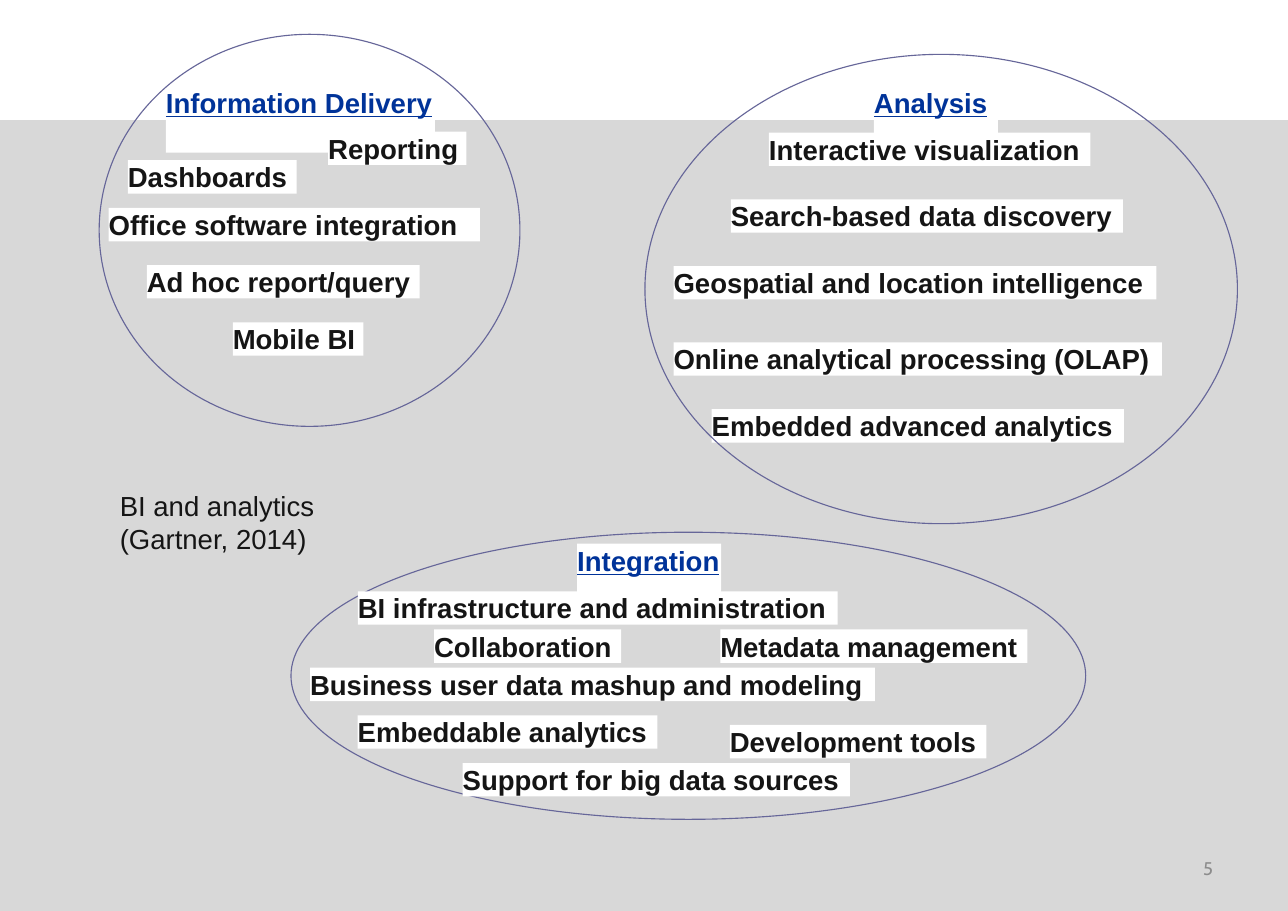
from pptx import Presentation
from pptx.dml.color import RGBColor
from pptx.enum.shapes import MSO_SHAPE as Shape
from pptx.enum.text import MSO_ANCHOR as Anchor, MSO_AUTO_SIZE as AutoSize, PP_ALIGN as Align
from pptx.util import Inches, Pt

WIDTH, HEIGHT = Inches(11.69), Inches(8.27)
CELL = WIDTH / 135  # square grid: 135 columns across the slide
LABEL_ROWS, HEADING_ROWS = 3.5, 7
ROW_SHIFT = 0.2  # labels sit slightly below their grid row

WHITE = RGBColor(0xFF, 0xFF, 0xFF)
GREY = RGBColor(0xD8, 0xD8, 0xD8)
NUMBER_GREY = RGBColor(0x8C, 0x8C, 0x8C)
INK = RGBColor(0x15, 0x15, 0x15)
BLUE = RGBColor(0x00, 0x33, 0x99)
RING = RGBColor(0x66, 0x66, 0x99)

PLAIN = dict(name="Arial", size=Pt(18), bold=False, color=INK)
LABEL = dict(PLAIN, bold=True)
HEADING = dict(LABEL, color=BLUE, underline=True)
NUMBER = dict(PLAIN, name="Cabin", size=Pt(12), color=NUMBER_GREY)

# Each ring: box in cells, whether it lies over its labels, heading, labels.
# Heading and labels: text, column and row inside the ring, width in columns.
RINGS = [
    ((30.5, 55.8, 83.3, 30.1), False, ("Integration", 30, 1, 15.1), [
        ("BI infrastructure and administration", 7, 6, 50.3),
        ("Metadata management", 45, 10, 32.2),
        ("Business user data mashup and modeling", 2, 14, 59.2),
        ("Development tools", 46, 20, 26.9),
        ("Embeddable analytics", 7, 19, 31.4),
        ("Collaboration", 15, 10, 19.6),
        ("Support for big data sources", 18, 24, 40.6),
    ]),
    ((10.4, 3.6, 44.1, 41.1), True, ("Information Delivery", 7, 5.2, 28.2), [
        ("Reporting", 24, 10, 14.5),
        ("Dashboards", 3, 13, 17.7),
        ("Ad hoc report/query", 5, 24, 28.6),
        ("Office software integration", 1, 18, 38.9),
        ("Mobile BI", 14, 30, 13.7),
    ]),
    ((67.6, 5.7, 62.1, 49.2), True, ("Analysis", 24, 3.1, 13), [
        ("Interactive visualization", 13, 8, 33.7),
        ("Search-based data discovery", 9, 15, 41.1),
        ("Geospatial and location intelligence", 3, 22, 50.6),
        ("Embedded advanced analytics", 7, 37, 43.2),
        ("Online analytical processing (OLAP)", 3, 30, 51.2),
    ]),
]


def cells(*counts):
    return [round(count * CELL) for count in counts]


def write(shape, text, style, align=Align.LEFT, anchor=Anchor.TOP, margin=None):
    frame = shape.text_frame
    frame.text = text
    settings = dict(word_wrap=True, auto_size=AutoSize.NONE, vertical_anchor=anchor)
    if margin is not None:
        settings.update({f"margin_{side}": margin for side in ("left", "top", "right", "bottom")})
    for name, value in settings.items():
        setattr(frame, name, value)
    for para in frame.paragraphs:
        para.alignment = align
        for name, value in style.items():
            if name == "color":
                para.runs[0].font.color.rgb = value
            else:
                setattr(para.runs[0].font, name, value)


def add_filled(page, box, color):
    shape = page.shapes.add_shape(Shape.RECTANGLE, *box)
    shape.shadow.inherit = False
    shape.fill.solid()
    shape.fill.fore_color.rgb = color
    shape.line.fill.background()
    return shape


def add_ellipse(page, box):
    ellipse = page.shapes.add_shape(Shape.OVAL, *cells(*box))
    ellipse.shadow.inherit = False
    ellipse.fill.background()
    ellipse.line.color.rgb = RING
    ellipse.line.width = Pt(0.75)


def add_ring(page, box, on_top, heading, labels):
    """Draw one ellipse with its heading and labels placed from its top left corner."""
    if not on_top:
        add_ellipse(page, box)
    left, top = box[:2]
    rows = [(heading, HEADING_ROWS, HEADING)]
    rows += [(label, LABEL_ROWS, LABEL) for label in labels]
    for (text, column, row, width), height, style in rows:
        place = cells(left + column, top + row + ROW_SHIFT, width, height)
        write(add_filled(page, place, WHITE), text, style, margin=0)
    if on_top:
        add_ellipse(page, box)


def add_backdrop(page):
    top, = cells(12.6)
    band = add_filled(page, (0, top, WIDTH, HEIGHT - top), GREY)
    page.shapes.title.element.addprevious(band.element)


def add_caption(page, box):
    title = page.shapes.title
    for name, value in zip(("left", "top", "width", "height"), cells(*box)):
        setattr(title, name, value)
    write(title, "BI and analytics\n(Gartner, 2014)", PLAIN)


def add_page_number(page, box):
    number = page.shapes.add_textbox(*cells(*box))
    write(number, "5", NUMBER, Align.RIGHT, Anchor.MIDDLE)


def main():
    deck = Presentation()
    deck.slide_width, deck.slide_height = WIDTH, HEIGHT
    page = deck.slides.add_slide(deck.slide_layouts[5])
    add_backdrop(page)
    add_caption(page, (11.4, 50.7, 24.2, 8.2))
    for ring in RINGS:
        add_ring(page, *ring)
    add_page_number(page, (96.8, 88.5, 31.5, 5.1))
    deck.save("out.pptx")


if __name__ == "__main__":
    main()
